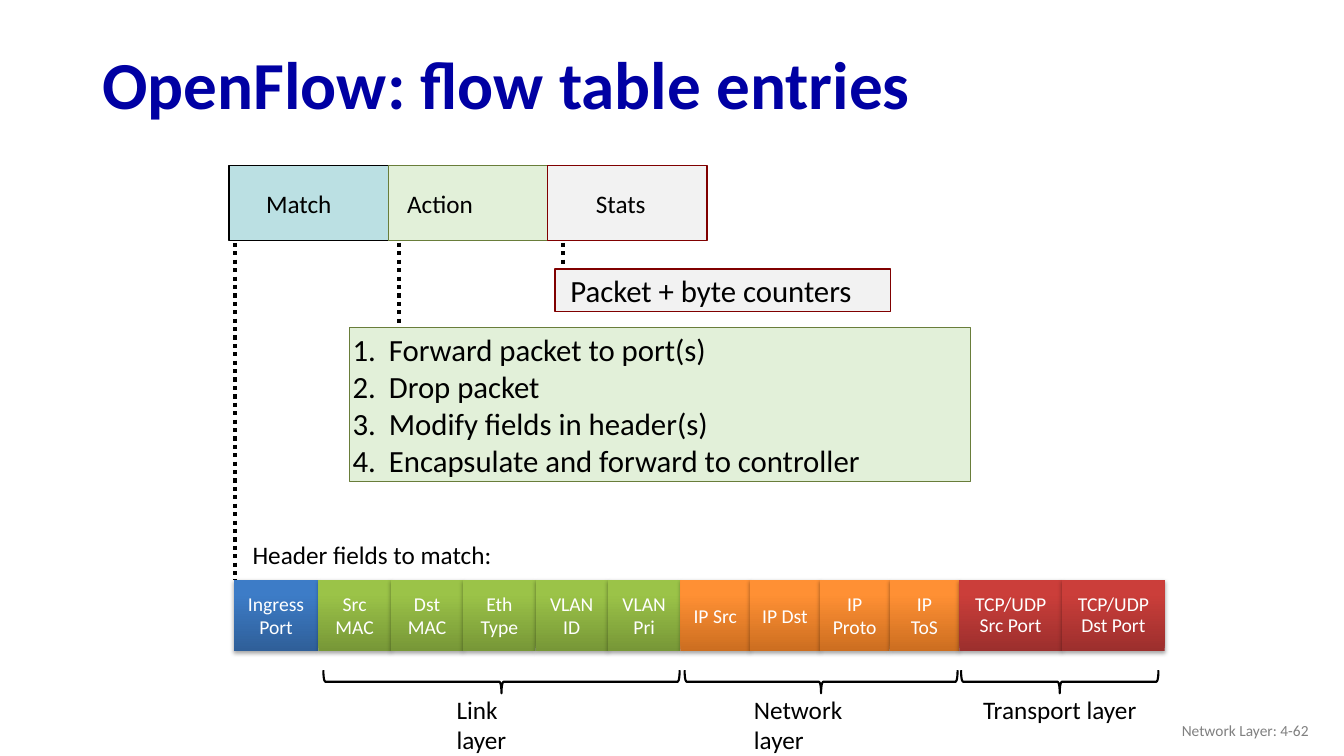
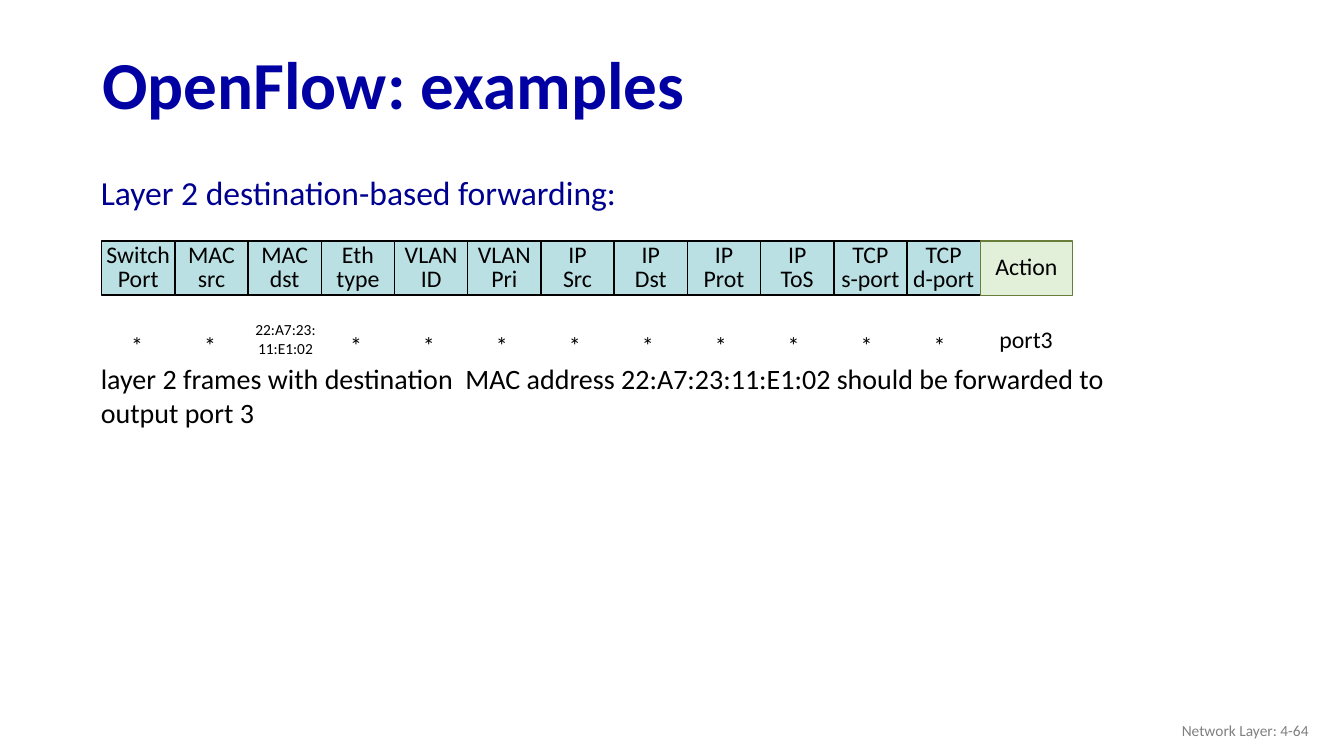
import pptx
import pptx.util
import pptx.dml.color
import pptx.enum.dml
import pptx.enum.shapes
import pptx.enum.text
import pptx.oxml
import pptx.oxml.ns
from lxml import etree

Pt = pptx.util.Pt
SHAPE = pptx.enum.shapes.MSO_SHAPE
ALIGN = pptx.enum.text.PP_ALIGN
ANCHOR = pptx.enum.text.MSO_ANCHOR
FONT = "Calibri"
BLACK, WHITE, GRAY = "000000", "FFFFFF", "808080"
TITLE_BLUE, HEADING_BLUE = "0000A3", "000090"
TEAL, PALE_GREEN, PALE_GRAY = "BBE0E3", "E2F0D9", "F2F2F2"
OLIVE, MAROON = "697D3A", "800000"
BLUE = ("2F5F99", "3D7CC7")
GREEN = ("779737", "9BC348")
ORANGE = ("CC6E20", "FF9034")
RED = ("9C2F2D", "CB3E3A")
DEFAULT_INSETS = (7.2, 3.6, 7.2, 3.6)
NO_INSETS = (0, 0, 0, 0)

HEADER_FIELDS = [
    (["Ingress Port"], 60.5, BLUE, None),
    (["Src MAC", "Dst MAC", "Eth Type", "VLAN\nID", "VLAN\nPri"], 51.7, GREEN, None),
    (["IP Src", "IP Dst", "IP Proto", "IP\nToS"], 49.8, ORANGE, None),
    (["TCP/UDP Src Port", "TCP/UDP Dst Port"], 73.4, RED, Pt(14.8)),
]
MATCH_COLUMNS = ["Switch\nPort", "MAC\nsrc", "MAC\ndst", "Eth\ntype", "VLAN\nID",
                 "VLAN\nPri", "IP\nSrc", "IP\nDst", "IP\nProt", "IP\nToS",
                 "TCP\ns-port", "TCP\nd-port"]
MAC_COLUMN = 2


def color(hex_text):
    return pptx.dml.color.RGBColor.from_string(hex_text)


def write(sp, text, size, ink=BLACK, align=ALIGN.LEFT, anchor=ANCHOR.MIDDLE,
          insets=NO_INSETS, spacing=None, bold=False):
    tf = sp.text_frame
    tf.text = text
    tf.word_wrap = True
    tf.auto_size = pptx.enum.text.MSO_AUTO_SIZE.NONE
    tf.vertical_anchor = anchor
    tf.margin_left, tf.margin_top, tf.margin_right, tf.margin_bottom = map(Pt, insets)
    for p in tf.paragraphs:
        p.alignment = align
        p.space_before = Pt(0)
        if spacing:
            p.line_spacing = spacing
        for r in p.runs:
            r.font.name = FONT
            r.font.size = Pt(size)
            r.font.bold = bold
            r.font.color.rgb = color(ink)


def place(sp, left, top, width, height):
    sp.left, sp.top, sp.width, sp.height = map(Pt, (left, top, width, height))


def paint(sp, fill, line):
    sp.fill.solid()
    sp.fill.fore_color.rgb = color(fill)
    sp.line.color.rgb = color(line)
    sp.line.width = Pt(1)


def add_label(s, box, text, size, **style):
    sp = s.shapes.add_textbox(*map(Pt, box))
    write(sp, text, size, **style)


def add_box(s, box, text, size, fill, line, **style):
    sp = s.shapes.add_shape(SHAPE.RECTANGLE, *map(Pt, box))
    sp.shadow.inherit = False
    paint(sp, fill, line)
    write(sp, text, size, **style)


def add_field(s, box, text, shades, spacing):
    sp = s.shapes.add_shape(SHAPE.RECTANGLE, *map(Pt, box))
    sp.line.fill.background()
    sp.fill.gradient()
    sp.fill.gradient_angle = 90
    for stop, shade, position in zip(sp.fill.gradient_stops, shades, (0, 0.8)):
        stop.color.rgb = color(shade)
        stop.position = position
    sp.shadow.inherit = False
    effects = sp._element.spPr.find(pptx.oxml.ns.qn("a:effectLst"))
    shadow = etree.SubElement(effects, pptx.oxml.ns.qn("a:outerShdw"),
                              blurRad=str(Pt(3.1)), dist=str(Pt(1.8)),
                              dir="5400000", rotWithShape="0")
    ink = etree.SubElement(shadow, pptx.oxml.ns.qn("a:srgbClr"), val=BLACK)
    etree.SubElement(ink, pptx.oxml.ns.qn("a:alpha"), val="35000")
    write(sp, text, 14, ink=WHITE, align=ALIGN.CENTER, insets=DEFAULT_INSETS, spacing=spacing)


def add_dotted_line(s, x, top, bottom):
    line = s.shapes.add_connector(pptx.enum.shapes.MSO_CONNECTOR.STRAIGHT,
                                  Pt(x), Pt(top), Pt(x), Pt(bottom))
    line.line.color.rgb = color(BLACK)
    line.line.width = Pt(3)
    line.line.dash_style = pptx.enum.dml.MSO_LINE.ROUND_DOT
    etree.SubElement(line._element.spPr, pptx.oxml.ns.qn("a:effectLst"))


def add_brace(s, left, right, middle, depth=16.5):
    span = right - left
    center = (left + right) / 2
    sp = s.shapes.add_shape(SHAPE.LEFT_BRACE, Pt(center - depth / 2),
                            Pt(middle - span / 2), Pt(depth), Pt(span))
    sp.rotation = 270
    sp.shadow.inherit = False
    sp.fill.background()
    sp.line.color.rgb = color(BLACK)
    sp.line.width = Pt(1.5)


def number_paragraphs(tf):
    for p in tf.paragraphs:
        pPr = p._p.get_or_add_pPr()
        pPr.set("marL", str(Pt(28)))
        pPr.set("indent", str(Pt(-26)))
        etree.SubElement(pPr, pptx.oxml.ns.qn("a:buFont"), typeface=FONT)
        etree.SubElement(pPr, pptx.oxml.ns.qn("a:buAutoNum"), type="arabicPeriod")


def add_slide(prs, layout, title, page):
    s = prs.slides.add_slide(prs.slide_layouts[layout])
    place(s.shapes.title, 66, 27.5, 828, 70.5)
    write(s.shapes.title, title, 48, ink=TITLE_BLUE, insets=DEFAULT_INSETS,
          spacing=0.9, bold=True)
    add_label(s, (726, 507.5, 216, 29), f"Network Layer: {page}", 11, ink=GRAY,
              align=ALIGN.RIGHT, insets=DEFAULT_INSETS)
    return s


def build_entries(prs):
    s = add_slide(prs, 1, "OpenFlow: flow table entries", "4-62")
    parts = [("Match", TEAL, BLACK, 26.5), ("Action", PALE_GREEN, OLIVE, 13.5),
             ("Stats", PALE_GRAY, MAROON, 34.5)]
    for i, (name, fill, line, inset) in enumerate(parts):
        add_box(s, (163.5 + 113.8 * i, 118, 113.8, 54), name, 18, fill, line,
                insets=(inset, 0, 0, 0))

    for x, bottom in ((168, 414), (284.8, 233), (402, 191.5)):
        add_dotted_line(s, x, 173.5, bottom)

    add_box(s, (396.5, 192.2, 239.8, 30.2), "Packet + byte counters", 22,
            PALE_GRAY, MAROON, insets=(11, 0, 0, 0))
    actions = s.placeholders[1]
    place(actions, 249.8, 234, 443.5, 110)
    paint(actions, PALE_GREEN, OLIVE)
    write(actions, "Forward packet to port(s)\nDrop packet\nModify fields in header(s)\n"
          "Encapsulate and forward to controller", 22)
    number_paragraphs(actions.text_frame)

    add_label(s, (170, 381.6, 191.5, 29), "Header fields to match:", 18,
              align=ALIGN.CENTER, anchor=ANCHOR.TOP, insets=DEFAULT_INSETS)
    left = 167
    for names, width, shades, spacing in HEADER_FIELDS:
        for name in names:
            add_field(s, (left, 414, width, 51), name, shades, spacing)
            left += width

    layers = [("Link layer", 231, 485.5, 319, 75.6, ALIGN.LEFT),
              ("Network layer", 489, 684, 531.4, 106.5, ALIGN.LEFT),
              ("Transport layer", 686.5, 827.5, 664.5, 185, ALIGN.CENTER)]
    for name, start, end, label_left, label_width, align in layers:
        add_brace(s, start, end, 487)
        add_label(s, (label_left, 492.5, label_width, 29), name, 18, align=align,
                  anchor=ANCHOR.TOP, insets=DEFAULT_INSETS)


def build_examples(prs):
    s = add_slide(prs, 5, "OpenFlow: examples", "4-64")
    add_label(s, (72, 122.5, 400, 29), "Layer 2 destination-based forwarding:", 24,
              ink=HEADING_BLUE)
    header = dict(align=ALIGN.CENTER, spacing=0.85)
    for i, name in enumerate(MATCH_COLUMNS):
        add_box(s, (72.6 + 52.3 * i, 172.2, 52.3, 38.4), name, 17, TEAL, BLACK, **header)
        if i != MAC_COLUMN:
            add_label(s, (72 + 52.1 * i, 234, 52, 25), "*", 17, align=ALIGN.CENTER)
    add_box(s, (700.2, 172.2, 66, 39), "Action", 17, PALE_GREEN, OLIVE, **header)
    add_label(s, (178, 229.7, 52, 24.5), "22:A7:23:\n11:E1:02", 11, align=ALIGN.CENTER)
    add_label(s, (707, 229.7, 52, 25), "port3", 17, align=ALIGN.CENTER)
    add_label(s, (72, 258.5, 736, 48),
              "layer 2 frames with destination  MAC address 22:A7:23:11:E1:02 "
              "should be forwarded to output port 3", 20)


def main():
    prs = pptx.Presentation()
    prs.slide_width, prs.slide_height = Pt(960), Pt(540)
    build_entries(prs)
    build_examples(prs)
    prs.save("out.pptx")


if __name__ == "__main__":
    main()
